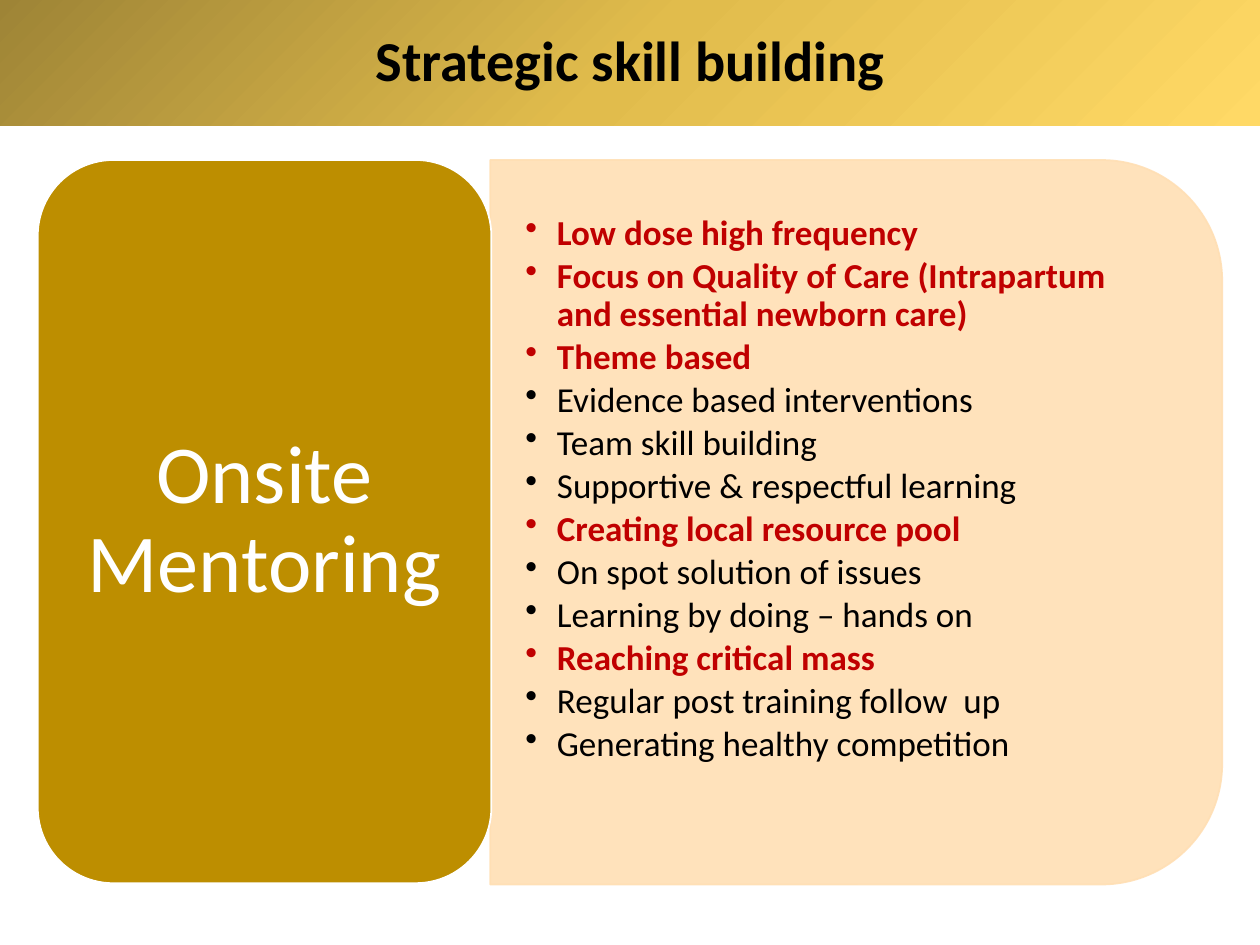
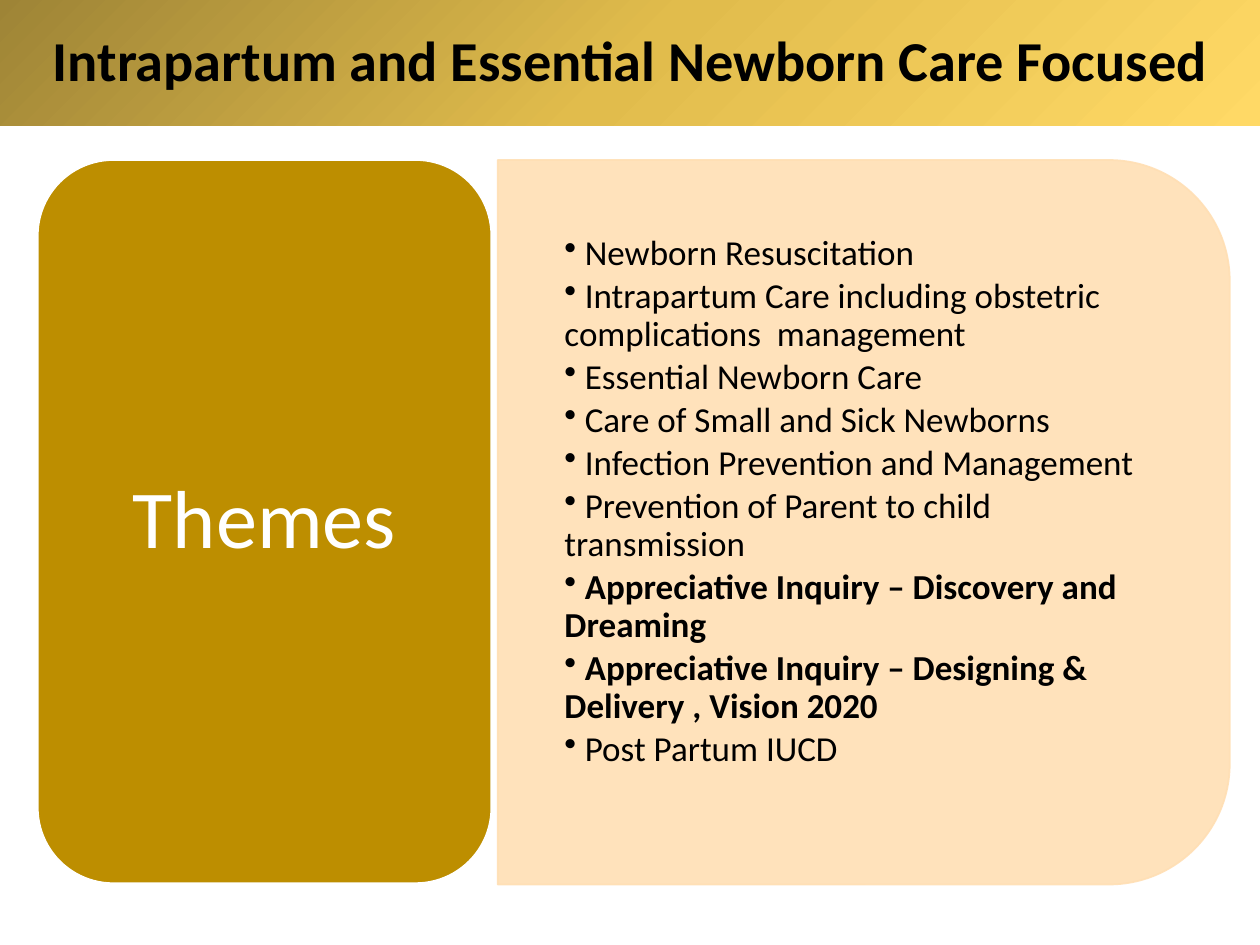
import lxml.etree
import pptx
import pptx.dml.color
import pptx.enum.shapes
import pptx.enum.text
import pptx.oxml
import pptx.oxml.ns
import pptx.util

Inches = pptx.util.Inches
Pt = pptx.util.Pt
RGBColor = pptx.dml.color.RGBColor
SHAPES = pptx.enum.shapes.MSO_SHAPE
ALIGN = pptx.enum.text.PP_ALIGN
ANCHOR = pptx.enum.text.MSO_ANCHOR
qn = pptx.oxml.ns.qn

BLACK = RGBColor(0x00, 0x00, 0x00)
WHITE = RGBColor(0xFF, 0xFF, 0xFF)
RED = RGBColor(0xC0, 0x00, 0x00)
GOLD = RGBColor(0xBD, 0x8E, 0x00)
PEACH = RGBColor(0xFF, 0xDF, 0xB4)
BAND_STOPS = (
    (0, RGBColor(0x9E, 0x84, 0x36)),
    (50, RGBColor(0xE1, 0xBC, 0x4C)),
    (100, RGBColor(0xFF, 0xD9, 0x66)),
)
FONT = "Calibri"
TITLE_ONLY = 5

# Boxes are left, top, width, height in inches.
TITLE_BOX = (0, 0, 10, 1)
LABEL_BOX = (0.3, 1.27, 3.6, 5.74)
PANEL_TOP, PANEL_WIDTH, PANEL_HEIGHT = 1.27, 5.81, 5.75

PLAIN = (BLACK, False)
STRONG = (BLACK, True)
KEY = (RED, True)

MENTORING_POINTS = (
    ("Low dose high frequency", KEY),
    ("Focus on Quality of Care (Intrapartum and essential newborn care)", KEY),
    ("Theme based", KEY),
    ("Evidence based interventions", PLAIN),
    ("Team skill building", PLAIN),
    ("Supportive & respectful learning", PLAIN),
    ("Creating local resource pool", KEY),
    ("On spot solution of issues", PLAIN),
    ("Learning by doing – hands on", PLAIN),
    ("Reaching critical mass", KEY),
    ("Regular post training follow  up", PLAIN),
    ("Generating healthy competition", PLAIN),
)
THEME_POINTS = (
    (" Newborn Resuscitation", PLAIN),
    (" Intrapartum Care including obstetric complications  management", PLAIN),
    (" Essential Newborn Care", PLAIN),
    (" Care of Small and Sick Newborns", PLAIN),
    (" Infection Prevention and Management", PLAIN),
    (" Prevention of Parent to child transmission", PLAIN),
    (" Appreciative Inquiry – Discovery and Dreaming", STRONG),
    (" Appreciative Inquiry – Designing & Delivery , Vision 2020", STRONG),
    (" Post Partum IUCD", PLAIN),
)


def add_span(para, text, size, color, bold=False):
    para.line_spacing = 0.9
    span = para.add_run()
    span.text = text
    span.font.name = FONT
    span.font.size = Pt(size)
    span.font.color.rgb = color
    span.font.bold = bold


def set_frame(frame, left, top, right, bottom):
    """Wrap and centre the text vertically inside the given insets."""
    frame.word_wrap = True
    frame.auto_size = pptx.enum.text.MSO_AUTO_SIZE.NONE
    frame.vertical_anchor = ANCHOR.MIDDLE
    frame.margin_left, frame.margin_top = Inches(left), Inches(top)
    frame.margin_right, frame.margin_bottom = Inches(right), Inches(bottom)


def add_filled_shape(page, kind, box, fill, line):
    shape = page.shapes.add_shape(kind, *map(Inches, box))
    shape.shadow.inherit = False
    shape.fill.solid()
    shape.fill.fore_color.rgb = fill
    shape.line.color.rgb = line
    shape.line.width = Pt(1)
    return shape


def set_bullet(para, margin, indent):
    props = para._p.get_or_add_pPr()
    props.set("marL", str(Inches(margin)))
    props.set("indent", str(Inches(indent)))
    lxml.etree.SubElement(props, qn("a:buChar")).set("char", "•")


def fill_band(shape):
    """Give the shape the diagonal gold gradient."""
    gradient = lxml.etree.SubElement(shape._element.spPr, qn("a:gradFill"))
    stops = lxml.etree.SubElement(gradient, qn("a:gsLst"))
    for percent, color in BAND_STOPS:
        stop = lxml.etree.SubElement(stops, qn("a:gs"), pos=str(percent * 1000))
        lxml.etree.SubElement(stop, qn("a:srgbClr"), val=str(color))
    lxml.etree.SubElement(gradient, qn("a:lin"), ang=str(45 * 60000), scaled="0")


def set_title(page, text, box):
    title = page.shapes.title
    title.left, title.top, title.width, title.height = map(Inches, box)
    fill_band(title)
    set_frame(title.text_frame, 0.1, 0.05, 0.1, 0.05)
    para = title.text_frame.paragraphs[0]
    para.alignment = ALIGN.CENTER
    add_span(para, text, 32.2, BLACK, bold=True)


def add_label(page, text, box):
    label = add_filled_shape(page, SHAPES.ROUNDED_RECTANGLE, box, GOLD, WHITE)
    set_frame(label.text_frame, 0.2, 0.1, 0.2, 0.1)
    para = label.text_frame.paragraphs[0]
    para.alignment = ALIGN.CENTER
    add_span(para, text, 47, WHITE)


def add_panel(page, points, box, indent, bottom_inset):
    """Panel rounded on its right side, with a bulleted list over it."""
    left, top, width, height = box
    shift = (width - height) / 2
    turned_box = (left + shift, top - shift, height, width)
    panel = add_filled_shape(
        page, SHAPES.ROUND_2_SAME_RECTANGLE, turned_box, PEACH, PEACH)
    panel.rotation = 90
    for color in panel._element.spPr.iter(qn("a:srgbClr")):
        lxml.etree.SubElement(color, qn("a:alpha"), val="90000")

    text_box = page.shapes.add_textbox(
        Inches(left + 0.01), Inches(top + 0.27), Inches(5.52), Inches(5.19))
    frame = text_box.text_frame
    set_frame(frame, 0.27, 0.14, 0.27, bottom_inset)
    for number, (text, (color, bold)) in enumerate(points):
        para = frame.add_paragraph() if number else frame.paragraphs[0]
        add_span(para, text, 20, color, bold)
        para.space_after = Pt(3)
        set_bullet(para, 0.25, indent)


def add_topic_page(deck, title, label, points, panel_left, indent, bottom_inset):
    page = deck.slides.add_slide(deck.slide_layouts[TITLE_ONLY])
    set_title(page, title, TITLE_BOX)
    panel_box = (panel_left, PANEL_TOP, PANEL_WIDTH, PANEL_HEIGHT)
    add_panel(page, points, panel_box, indent, bottom_inset)
    add_label(page, label, LABEL_BOX)


def main():
    deck = pptx.Presentation()
    deck.slide_width, deck.slide_height = Inches(10), Inches(7.5)
    add_topic_page(deck, "Strategic skill building", "Onsite Mentoring",
                   MENTORING_POINTS, 3.89, -0.25, 0.64)
    add_topic_page(deck, "Intrapartum and Essential Newborn Care Focused", "Themes",
                   THEME_POINTS, 3.95, 0, 0.44)
    deck.save("out.pptx")


if __name__ == "__main__":
    main()
